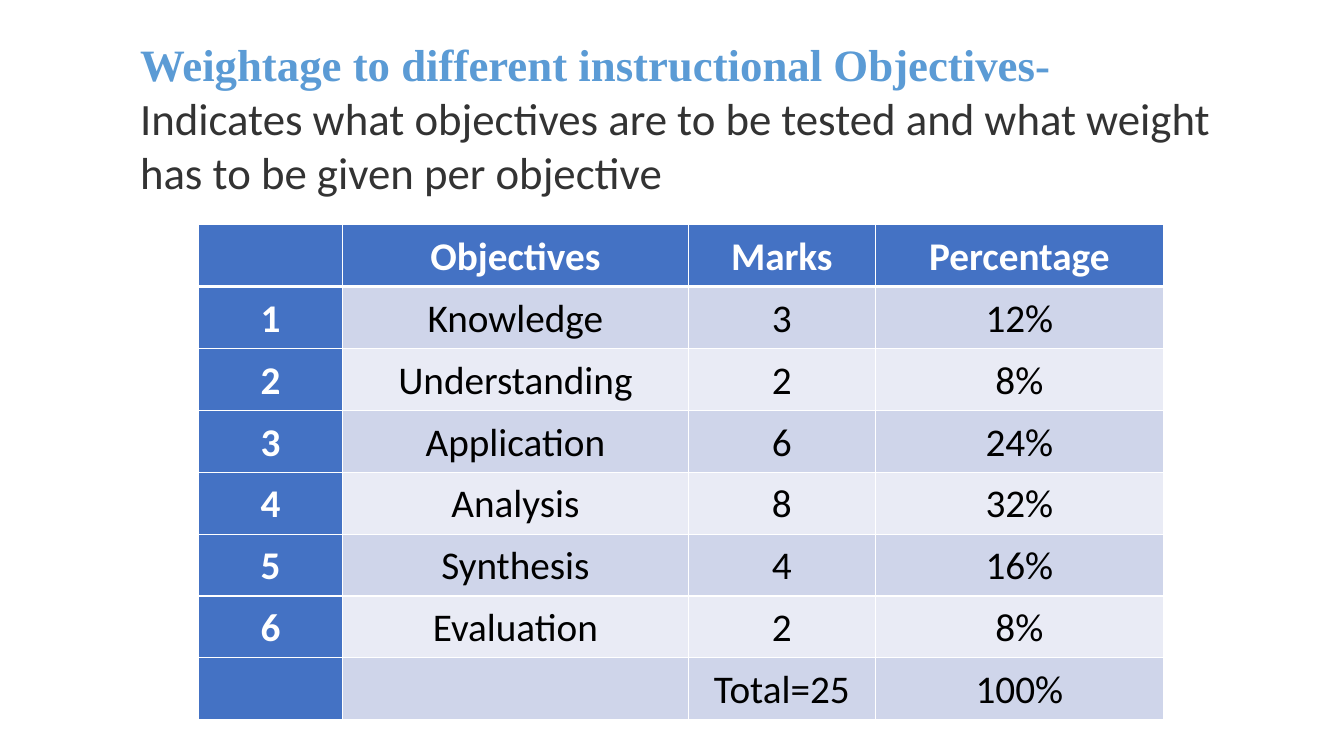
from lxml import etree
from pptx import Presentation
from pptx.dml.color import RGBColor
from pptx.enum.text import MSO_ANCHOR, PP_ALIGN
from pptx.oxml.ns import qn
from pptx.util import Emu, Inches, Pt

CENTER = PP_ALIGN.CENTER
LEFT = PP_ALIGN.LEFT
TOP = MSO_ANCHOR.TOP

WHITE = RGBColor(0xFF, 0xFF, 0xFF)
BLACK = RGBColor(0x00, 0x00, 0x00)
CHARCOAL = RGBColor(0x33, 0x33, 0x33)
SKY = RGBColor(0x5B, 0x9B, 0xD5)
BLUE = RGBColor(0x44, 0x72, 0xC4)
BAND_DARK = RGBColor(0xCF, 0xD5, 0xEA)
BAND_LIGHT = RGBColor(0xE9, 0xEB, 0xF5)

HEADING = "Weightage to different instructional Objectives-"
EXPLANATION = (
    "Indicates what objectives are to be tested and what weight "
    "has to be given per objective"
)
WEIGHTAGE = [
    ("", "Objectives", "Marks", "Percentage"),
    ("1", "Knowledge", "3", "12%"),
    ("2", "Understanding", "2", "8%"),
    ("3", "Application", "6", "24%"),
    ("4", "Analysis", "8", "32%"),
    ("5", "Synthesis", "4", "16%"),
    ("6", "Evaluation", "2", "8%"),
    ("", "", "Total=25", "100%"),
]
COLUMN_WEIGHTS = (15, 36, 19.5, 30)


def write(paragraph, text, *, size, color, font="Calibri", bold=False,
          align=LEFT, line_spacing=1.0, space_after=0):
    """Put formatted text into a paragraph."""
    paragraph.alignment = align
    paragraph.line_spacing = line_spacing
    paragraph.space_after = Pt(space_after)
    run = paragraph.add_run()
    run.text = text
    run.font.name = font
    run.font.size = Pt(size)
    run.font.bold = bold
    run.font.color.rgb = color


class SlideBuilder:
    """Place styled elements on a slide by percent of its size."""

    def __init__(self, presentation):
        """Add a blank slide to the presentation."""
        self.width = presentation.slide_width
        self.height = presentation.slide_height
        self.slide = presentation.slides.add_slide(presentation.slide_layouts[6])

    def area(self, left, top, width, height):
        """Turn percentages of the slide into lengths."""
        return (
            Emu(round(self.width * left / 100)),
            Emu(round(self.height * top / 100)),
            Emu(round(self.width * width / 100)),
            Emu(round(self.height * height / 100)),
        )

    def introduction(self, area, heading, explanation):
        """Add the heading with its explanation below."""
        frame = self.slide.shapes.add_textbox(*self.area(*area)).text_frame
        frame.word_wrap = True
        frame.vertical_anchor = TOP
        write(frame.paragraphs[0], heading, size=32, color=SKY,
              font="Times New Roman", bold=True)
        write(frame.add_paragraph(), explanation, size=32, color=CHARCOAL)

    def border(self, cell, row):
        """Draw white cell edges, thicker below the header."""
        edges = {
            "a:lnL": 1,
            "a:lnR": 1,
            "a:lnT": 3 if row == 1 else 1,
            "a:lnB": 3 if row == 0 else 1,
        }
        properties = cell._tc.get_or_add_tcPr()
        for position, (tag, points) in enumerate(edges.items()):
            edge = etree.Element(qn(tag), w=str(Pt(points)))
            fill = etree.SubElement(edge, qn("a:solidFill"))
            etree.SubElement(fill, qn("a:srgbClr"), val=str(WHITE))
            properties.insert(position, edge)

    def table(self, area, rows, weights):
        """Add a banded table with a header row and a header column."""
        left, top, width, height = self.area(*area)
        grid = self.slide.shapes.add_table(
            len(rows), len(weights), left, top, width, height
        ).table
        for column, weight in zip(grid.columns, weights):
            column.width = Emu(round(width * weight / sum(weights)))
        for r, values in enumerate(rows):
            for c, value in enumerate(values):
                cell = grid.cell(r, c)
                is_header = r == 0 or c == 0
                band = BAND_DARK if r % 2 else BAND_LIGHT
                cell.fill.solid()
                cell.fill.fore_color.rgb = BLUE if is_header else band
                self.border(cell, r)
                if value:
                    write(cell.text_frame.paragraphs[0], value, size=28,
                          color=WHITE if is_header else BLACK, bold=is_header,
                          align=CENTER, line_spacing=1.07, space_after=8)


def main():
    """Build and save the weightage slide."""
    presentation = Presentation()
    presentation.slide_width = Inches(13.33)
    presentation.slide_height = Inches(7.5)
    builder = SlideBuilder(presentation)
    builder.table((14.78, 29.73, 71.79, 65.47), WEIGHTAGE, COLUMN_WEIGHTS)
    builder.introduction((9.68, 4.27, 83.35, 26.93), HEADING, EXPLANATION)
    presentation.save("out.pptx")


if __name__ == "__main__":
    main()
